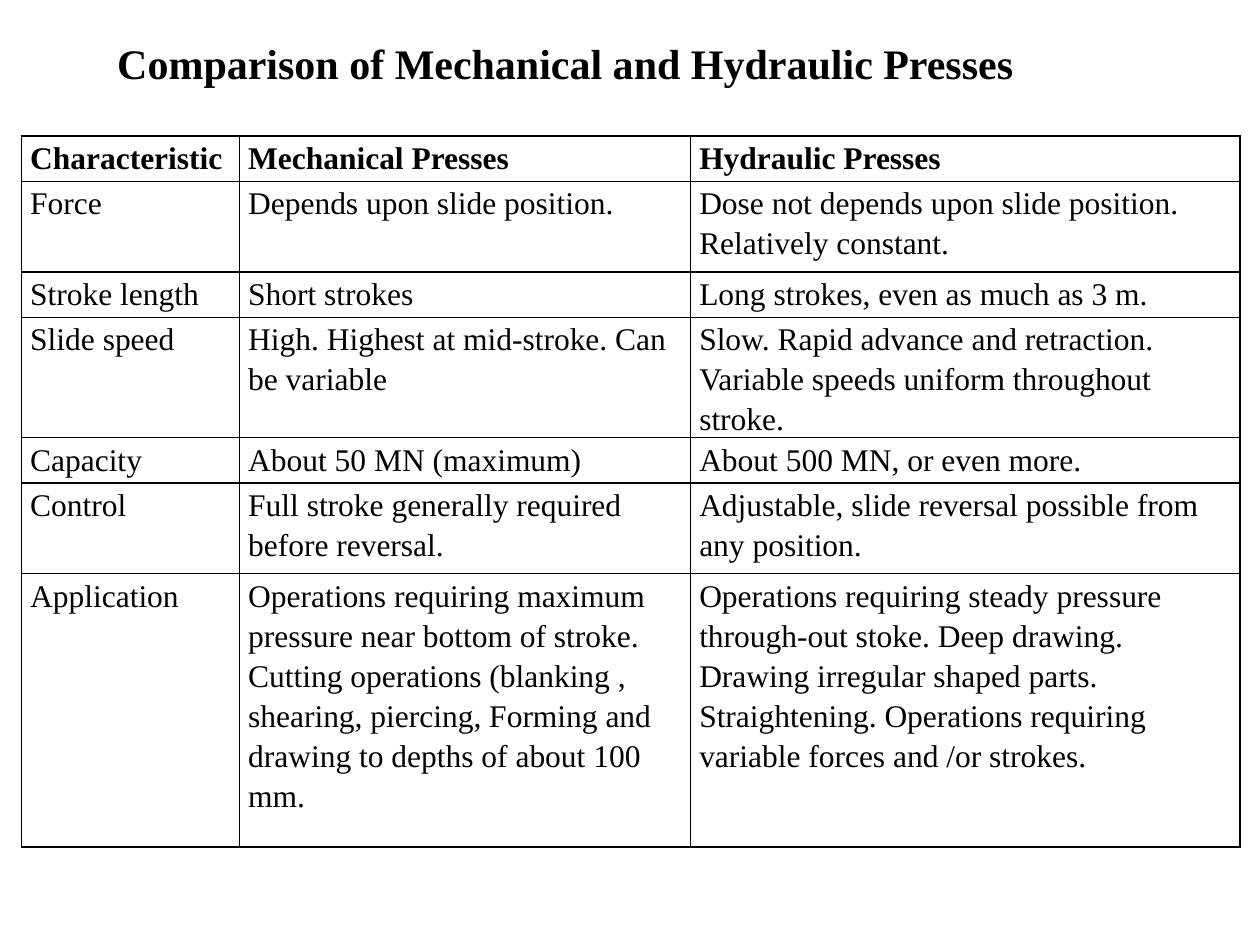
"""Build a slide that compares mechanical and hydraulic presses."""
from dataclasses import dataclass

from lxml import etree
from pptx import Presentation
from pptx import util as u
from pptx.dml.color import RGBColor
from pptx.enum import text
from pptx.oxml import ns


@dataclass(frozen=True)
class Theme:
    font: str = "Times New Roman"
    ink: str = "000000"
    head: int = 24
    body: int = 18
    rule: int = 1
    lead: float = 1.15
    pad: float = 0.07
    wrap: int = 40


THEME = Theme()
TITLE = "Comparison of Mechanical and Hydraulic Presses"
COLS = [1.73, 3.58, 4.36]
HIGHS = [0.36, 0.72, 0.36, 0.72, 0.36, 0.72, 2.17]
ROWS = [
    ("Characteristic", "Mechanical Presses", "Hydraulic Presses"),
    ("Force", "Depends upon slide position.",
     "Dose not depends upon slide position. Relatively constant."),
    ("Stroke length", "Short strokes", "Long strokes, even as much as 3 m."),
    ("Slide speed", "High. Highest at mid-stroke. Can be variable",
     "Slow. Rapid advance and retraction. Variable speeds uniform "
     "throughout stroke."),
    ("Capacity", "About 50 MN (maximum)", "About 500 MN, or even more."),
    ("Control", "Full stroke generally required before reversal.",
     "Adjustable, slide reversal possible from any position."),
    ("Application",
     "Operations requiring maximum pressure near bottom of stroke. "
     "Cutting operations (blanking , shearing, piercing, Forming and "
     "drawing to depths of about 100 mm.",
     "Operations requiring steady pressure through-out stoke. Deep drawing. "
     "Drawing irregular shaped parts. Straightening. Operations requiring "
     "variable forces and /or strokes."),
]


def write(frame, words, size=THEME.body, bold=False,
          align=text.PP_ALIGN.LEFT, lead=1.0):
    para = frame.paragraphs[0]
    para.alignment = align
    para.line_spacing = lead
    run = para.add_run()
    run.text = words
    font = run.font
    font.name, font.size, font.bold = THEME.font, u.Pt(size), bold
    font.color.rgb = RGBColor.from_string(THEME.ink)


def edge(cell):
    props = cell._tc.get_or_add_tcPr()
    for side in ("lnL", "lnR", "lnT", "lnB"):
        line = etree.SubElement(props, ns.qn(f"a:{side}"),
                                w=str(u.Pt(THEME.rule)))
        fill = etree.SubElement(line, ns.qn("a:solidFill"))
        etree.SubElement(fill, ns.qn("a:srgbClr"), val=THEME.ink)


def fill_cell(cell, words, bold):
    edge(cell)
    cell.fill.background()
    cell.margin_left = cell.margin_right = u.Inches(THEME.pad)
    cell.margin_top = cell.margin_bottom = 0
    short = len(words) < THEME.wrap
    align = text.PP_ALIGN.JUSTIFY if short else text.PP_ALIGN.LEFT
    write(cell.text_frame, words, bold=bold, align=align, lead=THEME.lead)


def add_title(slide):
    title = slide.shapes.title
    title.left, title.top = u.Inches(0.83), u.Inches(0.25)
    title.width, title.height = u.Inches(7.42), u.Inches(0.5)
    frame = title.text_frame
    frame.word_wrap = True
    frame.auto_size = text.MSO_AUTO_SIZE.NONE
    frame.vertical_anchor = text.MSO_ANCHOR.TOP
    write(frame, TITLE, size=THEME.head, bold=True)


def add_grid(slide):
    grid = slide.shapes.add_table(
        len(ROWS), len(COLS), u.Inches(0.17), u.Inches(1.08),
        u.Inches(sum(COLS)), u.Inches(sum(HIGHS))).table
    grid.first_row = grid.horz_banding = False
    for col, wide in zip(grid.columns, COLS):
        col.width = u.Inches(wide)
    for i, (row, high) in enumerate(zip(grid.rows, HIGHS)):
        row.height = u.Inches(high)
        for cell, words in zip(row.cells, ROWS[i]):
            fill_cell(cell, words, bold=i == 0)


def main():
    deck = Presentation()
    deck.slide_width, deck.slide_height = u.Inches(10), u.Inches(7.5)
    slide = deck.slides.add_slide(deck.slide_layouts.get_by_name("Title Only"))
    add_grid(slide)
    add_title(slide)
    deck.save("out.pptx")


if __name__ == "__main__":
    main()
